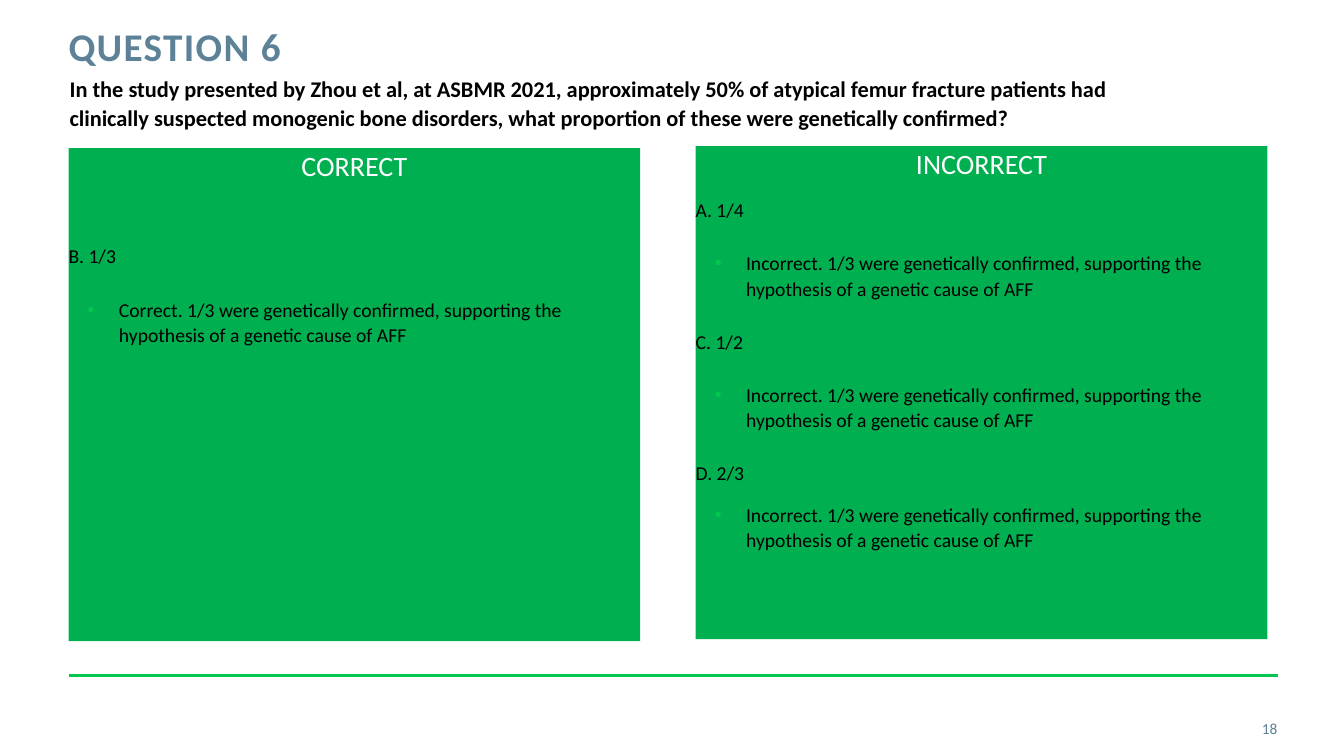
from lxml.etree import SubElement
from pptx import Presentation
from pptx.dml.color import RGBColor
from pptx.enum.shapes import MSO_CONNECTOR, MSO_SHAPE
from pptx.enum.text import MSO_ANCHOR, PP_ALIGN
from pptx.oxml.ns import qn
from pptx.util import Inches, Pt

COLORS = {"panel": "00B050", "accent": "03C74F", "slate": "5D8298",
          "black": "000000", "white": "FFFFFF"}
BODY = {"line_spacing": 1.07, "space_before": Pt(12), "space_after": Pt(8)}
REASON = "1/3 were genetically confirmed, supporting the hypothesis of a genetic cause of AFF"
QUESTION = ("In the study presented by Zhou et al, at ASBMR 2021, approximately 50% of "
            "atypical femur fracture patients had clinically suspected monogenic bone "
            "disorders, what proportion of these were genetically confirmed?")


def rgb(name):
    return RGBColor.from_string(COLORS[name])


def set_all(target, values):
    for name, value in values.items():
        setattr(target, name, value)


def prepare_frame(box, anchor=MSO_ANCHOR.TOP):
    frame = box.text_frame
    set_all(frame, {"word_wrap": True, "vertical_anchor": anchor, "margin_left": 0,
                    "margin_right": 0, "margin_top": 0, "margin_bottom": 0})
    return frame


def write(para, text, size, color, layout, bold=False):
    set_all(para, layout)
    span = para.add_run()
    span.text = text
    set_all(span.font, {"name": "Calibri", "size": Pt(size), "bold": bold})
    span.font.color.rgb = rgb(color)
    return span


def add_bullet(para):
    properties = para._p.get_or_add_pPr()
    properties.set("marL", str(Inches(0.5)))
    properties.set("indent", str(Inches(-0.31)))
    color = SubElement(properties, qn("a:buClr"))
    SubElement(color, qn("a:srgbClr")).set("val", COLORS["accent"])
    SubElement(properties, qn("a:buFont")).set("typeface", "Arial")
    SubElement(properties, qn("a:buChar")).set("char", "•")


def add_label(page, place, text, size, color, layout, bold=False, anchor=MSO_ANCHOR.TOP):
    box = page.shapes.add_textbox(*map(Inches, place))
    para = prepare_frame(box, anchor).paragraphs[0]
    return write(para, text, size, color, layout, bold)


def add_panel(page, left, top, heading, answers):
    """Answers are (choice, explanation, changes to the choice's spacing)."""
    box = page.shapes.add_shape(MSO_SHAPE.RECTANGLE, Inches(left), Inches(top),
                                Inches(5.67), Inches(4.89))
    box.shadow.inherit = False
    box.fill.solid()
    box.fill.fore_color.rgb = rgb("panel")
    box.line.fill.background()
    frame = prepare_frame(box)
    write(frame.paragraphs[0], heading, 20, "white", {"alignment": PP_ALIGN.CENTER})
    layout = {**BODY, "alignment": PP_ALIGN.LEFT}
    for choice, explanation, spacing in answers:
        write(frame.add_paragraph(), choice, 14, "black", {**layout, **spacing})
        para = frame.add_paragraph()
        add_bullet(para)
        write(para, explanation, 14, "black", layout)


def add_rule(page, left, right, y):
    rule = page.shapes.add_connector(MSO_CONNECTOR.STRAIGHT, Inches(left), Inches(y),
                                     Inches(right), Inches(y))
    rule.line.color.rgb = rgb("accent")
    rule.line.width = Pt(2)
    SubElement(rule._element.spPr, qn("a:effectLst"))


def main():
    deck = Presentation()
    deck.slide_width, deck.slide_height = Inches(13.33), Inches(7.5)
    page = deck.slides.add_slide(deck.slide_layouts[6])

    add_rule(page, 0.68, 12.68, 6.7)
    add_panel(page, 0.68, 1.47, "CORRECT",
              [("B. 1/3", f"Correct. {REASON}", {"space_before": Pt(43.5)})])
    title = add_label(page, (0.68, 0.27, 9.56, 0.88), "QUESTION 6", 28, "slate",
                      {"line_spacing": Pt(30)}, bold=True)
    title._r.get_or_add_rPr().set("spc", "100")
    add_label(page, (11.81, 7.03, 0.86, 0.4), "18", 11, "slate",
              {"alignment": PP_ALIGN.RIGHT}, anchor=MSO_ANCHOR.MIDDLE)
    wrong = f"Incorrect. {REASON}"
    add_panel(page, 6.9, 1.45, "INCORRECT",
              [("A. 1/4", wrong, {}), ("C. 1/2", wrong, {}),
               ("D. 2/3", wrong, {"space_after": Pt(0)})])
    add_label(page, (0.69, 0.73, 10.63, 0.77), QUESTION, 16, "black",
              {"line_spacing": 1.07}, bold=True)

    deck.save("out.pptx")


if __name__ == "__main__":
    main()
